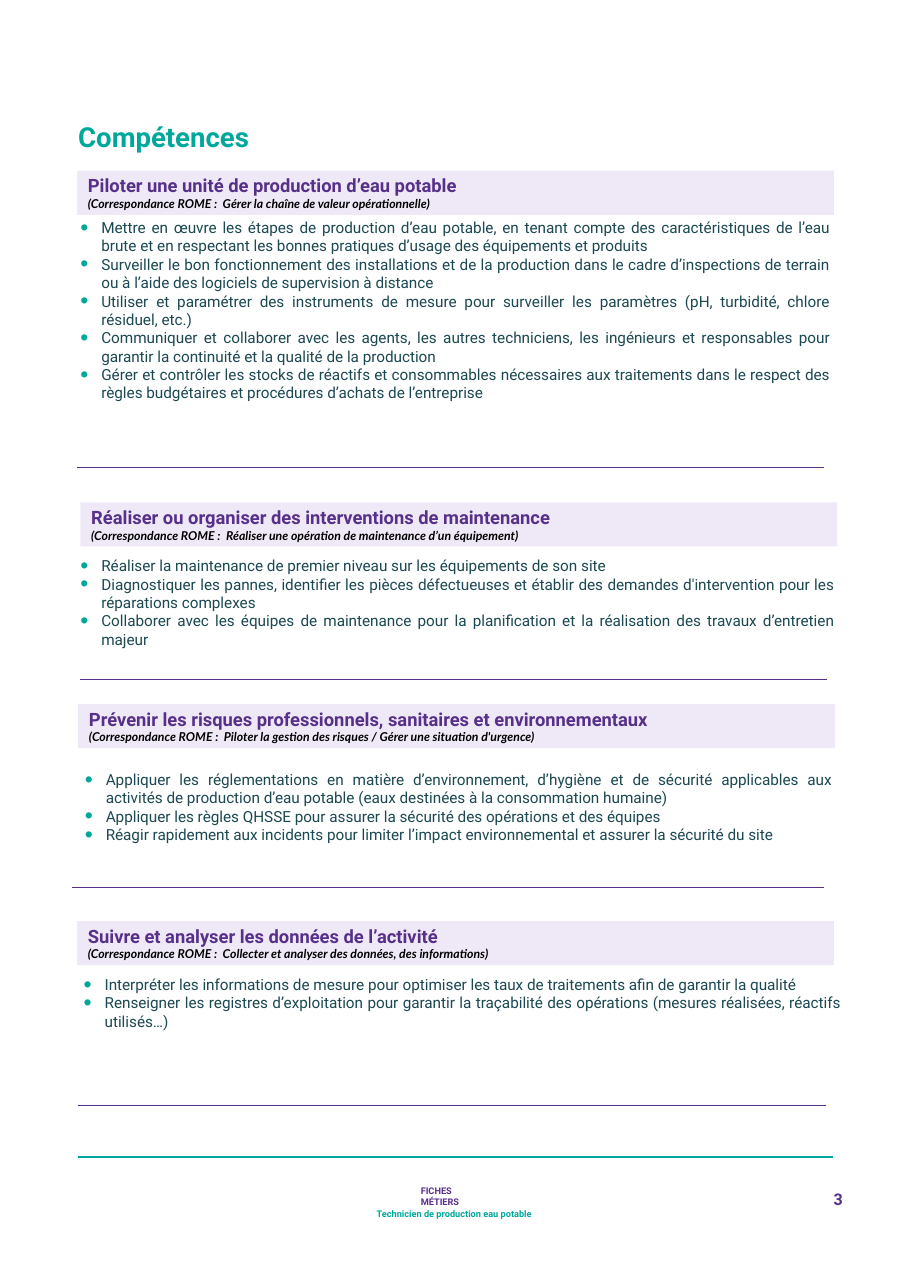
"""Build the skills page of a job sheet for a drinking water technician."""
import pptx
import pptx.dml.color
import pptx.enum.shapes
import pptx.enum.text
import pptx.oxml
import pptx.util
from pptx.util import Inches

TEAL, PURPLE, LAVENDER, SLATE, BLACK = "00A89B", "563089", "EFE8F6", "1B4851", "000000"
ALIGN = pptx.enum.text.PP_ALIGN
ANCHOR = pptx.enum.text.MSO_ANCHOR
NAMESPACE = 'xmlns:a="http://schemas.openxmlformats.org/drawingml/2006/main"'
BULLET = (
    f'<a:buClr {NAMESPACE}><a:srgbClr val="{TEAL}"/></a:buClr>',
    f'<a:buSzPct {NAMESPACE} val="150000"/>',
    f'<a:buFont {NAMESPACE} typeface="Arial"/>',
    f'<a:buChar {NAMESPACE} char="•"/>',
)


def paint(fill, color):
    fill.solid()
    fill.fore_color.rgb = pptx.dml.color.RGBColor.from_string(color)


def write(shape, text, styles, insets=(0, 0, 0, 0), anchor=ANCHOR.TOP, align=ALIGN.LEFT):
    frame = shape.text_frame
    frame.text = text
    frame.word_wrap = True
    frame.auto_size = pptx.enum.text.MSO_AUTO_SIZE.NONE
    frame.vertical_anchor = anchor
    frame.margin_left, frame.margin_top, frame.margin_right, frame.margin_bottom = map(Inches, insets)
    for index, paragraph in enumerate(frame.paragraphs):
        size, color, font_name, bold, italic = styles[min(index, len(styles) - 1)]
        paragraph.alignment = align
        paragraph.space_before = pptx.util.Pt(0)
        for run in paragraph.runs:
            run.font.size = pptx.util.Pt(size)
            run.font.name = font_name
            run.font.bold = bold
            run.font.italic = italic
            paint(run.font.fill, color)


sections = [
    ("Piloter une unité de production d’eau potable",
     "Gérer la chaîne de valeur opérationnelle",
     (0.7, 1.55), (0.73, 1.98, 6.8, 1.04),
     ["Mettre en œuvre les étapes de production d’eau potable, en tenant compte des caractéristiques de l’eau brute et en respectant les bonnes pratiques d’usage des équipements et produits",
      "Surveiller le bon fonctionnement des installations et de la production dans le cadre d’inspections de terrain ou à l’aide des logiciels de supervision à distance",
      "Utiliser et paramétrer des instruments de mesure pour surveiller les paramètres (pH, turbidité, chlore résiduel, etc.)",
      "Communiquer et collaborer avec les agents, les autres techniciens, les ingénieurs et responsables pour garantir la continuité et la qualité de la production",
      "Gérer et contrôler les stocks de réactifs et consommables nécessaires aux traitements dans le respect des règles budgétaires et procédures d’achats de l’entreprise"]),
    ("Réaliser ou organiser des interventions de maintenance",
     "Réaliser une opération de maintenance d’un équipement",
     (0.73, 4.56), (0.73, 5.05, 6.84, 0.9),
     ["Réaliser la maintenance de premier niveau sur les équipements de son site",
      "Diagnostiquer les pannes, identifier les pièces défectueuses et établir des demandes d'intervention pour les réparations complexes",
      "Collaborer avec les équipes de maintenance pour la planification et la réalisation des travaux d’entretien majeur"]),
    ("Prévenir les risques professionnels, sanitaires et environnementaux",
     "Piloter la gestion des risques / Gérer une situation d'urgence",
     (0.71, 6.39), (0.77, 6.99, 6.78, 0.64),
     ["Appliquer les réglementations en matière d’environnement, d’hygiène et de sécurité applicables aux activités de production d’eau potable (eaux destinées à la consommation humaine)",
      "Appliquer les règles QHSSE pour assurer la sécurité des opérations et des équipes",
      "Réagir rapidement aux incidents pour limiter l’impact environnemental et assurer la sécurité du site"]),
    ("Suivre et analyser les données de l’activité",
     "Collecter et analyser des données, des informations",
     (0.7, 8.36), (0.76, 8.85, 6.87, 0.71),
     ["Interpréter les informations de mesure pour optimiser les taux de traitements afin de garantir la qualité",
      "Renseigner les registres d’exploitation pour garantir la traçabilité des opérations (mesures réalisées, réactifs utilisés…)"]),
]

presentation = pptx.Presentation()
presentation.slide_width = Inches(8.27)
presentation.slide_height = Inches(11.69)
page = presentation.slides.add_slide(presentation.slide_layouts[4])
heading, *skill_lists = page.placeholders

heading.left, heading.top, heading.width, heading.height = map(Inches, (0.71, 1.12, 6.88, 0.27))
write(heading, "Compétences", [(18, TEAL, "Roboto", True, False)], anchor=ANCHOR.BOTTOM)
heading.text_frame.paragraphs[0].line_spacing = 0.9

for skill_list, (activity, reference, corner, area, skills) in zip(skill_lists, sections):
    band = page.shapes.add_shape(pptx.enum.shapes.MSO_SHAPE.RECTANGLE,
                                 *map(Inches, (*corner, 6.87, 0.4)))
    band.shadow.inherit = False
    band.line.fill.background()
    paint(band.fill, LAVENDER)
    write(band, f"{activity}\n(Correspondance ROME :  {reference})",
          [(12, PURPLE, "Roboto", True, False), (8, BLACK, "Lato", True, True)],
          (0.1, 0.05, 0, 0.05), ANCHOR.MIDDLE)

    skill_list.left, skill_list.top, skill_list.width, skill_list.height = map(Inches, area)
    write(skill_list, "\n".join(skills), [(10, SLATE, "Roboto", False, False)], align=ALIGN.JUSTIFY)
    for paragraph in skill_list.text_frame.paragraphs:
        properties = paragraph._p.get_or_add_pPr()
        properties.set("marL", str(Inches(0.19)))
        properties.set("indent", str(Inches(-0.19)))
        for element in BULLET:
            properties.append(pptx.oxml.parse_xml(element))

rules = [
    (0.7, 7.48, 4.24, PURPLE, 0.5),
    (0.73, 7.51, 6.17, PURPLE, 0.5),
    (0.65, 7.48, 8.05, PURPLE, 0.5),
    (0.71, 7.5, 10.03, PURPLE, 0.5),
    (0.71, 7.56, 10.5, TEAL, 1),
]
for start, end, height, color, weight in rules:
    rule = page.shapes.add_connector(pptx.enum.shapes.MSO_CONNECTOR.STRAIGHT,
                                     *map(Inches, (start, height, end, height)))
    paint(rule.line.fill, color)
    rule.line.width = pptx.util.Pt(weight)
    rule._element.spPr.append(pptx.oxml.parse_xml(f"<a:effectLst {NAMESPACE}/>"))

footers = [
    ("FICHES MÉTIERS", (3.82, 10.77, 0.62, 0.14), 6, PURPLE, (0, 0.04, 0, 0), ANCHOR.MIDDLE, ALIGN.LEFT),
    ("Technicien de production eau potable", (3.42, 10.93, 1.43, 0.14), 6, "00A79B", (0, 0.04, 0, 0), ANCHOR.MIDDLE, ALIGN.LEFT),
    ("3", (5.89, 10.75, 1.86, 0.21), 10.5, PURPLE, (0.1, 0.05, 0.1, 0.05), ANCHOR.TOP, ALIGN.RIGHT),
]
for text, area, size, color, insets, anchor, align in footers:
    footer = page.shapes.add_textbox(*map(Inches, area))
    write(footer, text, [(size, color, "Roboto", True, False)], insets, anchor, align)

presentation.save("out.pptx")
